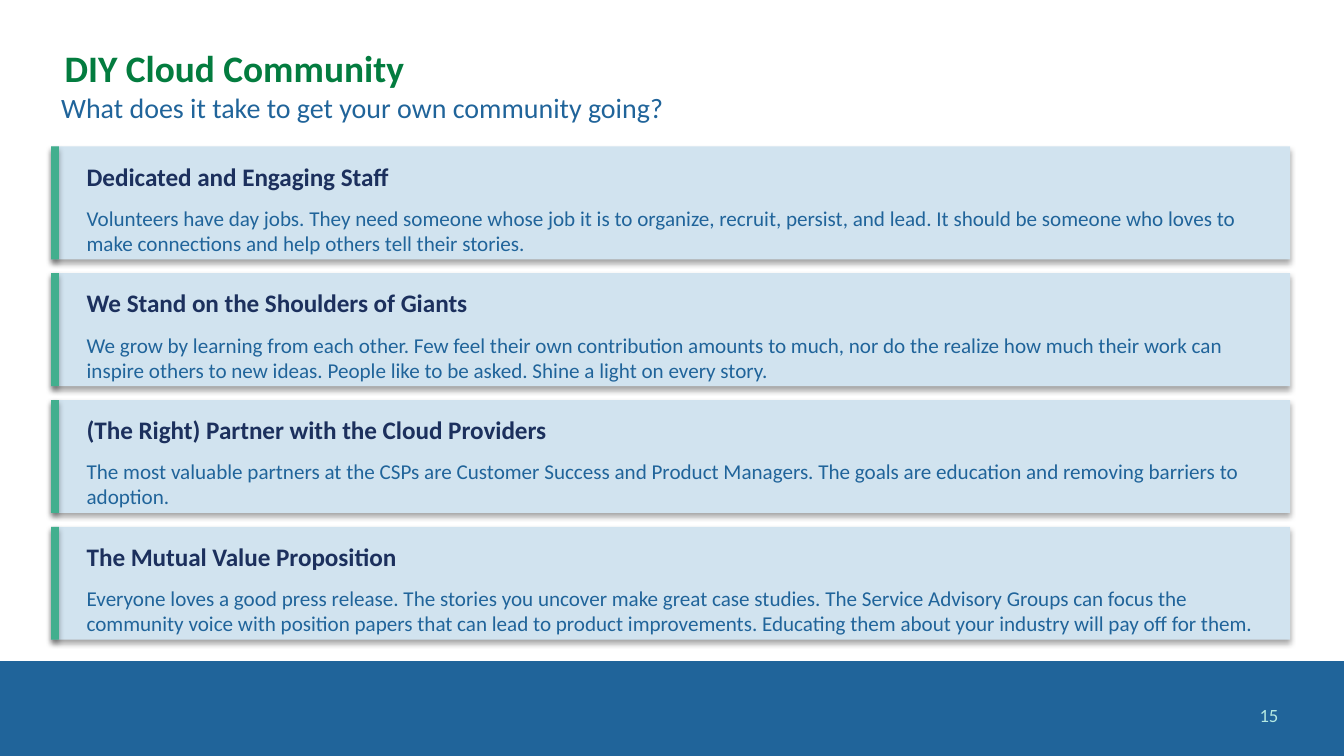
from lxml import etree
from pptx import Presentation
from pptx import util as u
from pptx.dml.color import RGBColor
from pptx.enum import shapes, text
from pptx.oxml import ns

BLUE = RGBColor(0x20, 0x64, 0x9A)
PALE_BLUE = RGBColor(0xD1, 0xE3, 0xEF)
NAVY = RGBColor(0x1C, 0x30, 0x5D)
GREEN = RGBColor(0x03, 0x7C, 0x3F)
MINT = RGBColor(0x42, 0xAF, 0x8E)
AQUA = RGBColor(0xB4, 0xE9, 0xE2)
BLACK = RGBColor(0, 0, 0)

WIDTH = 10
HEIGHT = WIDTH * 9 / 16
LEFT, CONTENT_WIDTH = 0.38, 9.22
CARDS_TOP, CARDS_BOTTOM, CARD_HEIGHT = 1.09, 4.76, 0.84
ACCENT_WIDTH = 0.06
TEXT_LEFT, TEXT_WIDTH = 0.57, 9
FOOTER_TOP = 4.92

CARDS = [
    ("Dedicated and Engaging Staff",
     "Volunteers have day jobs. They need someone whose job it is to organize, recruit, "
     "persist, and lead. It should be someone who loves to make connections and help "
     "others tell their stories."),
    ("We Stand on the Shoulders of Giants",
     "We grow by learning from each other. Few feel their own contribution amounts to "
     "much, nor do the realize how much their work can inspire others to new ideas. "
     "People like to be asked. Shine a light on every story."),
    ("(The Right) Partner with the Cloud Providers",
     "The most valuable partners at the CSPs are Customer Success and Product Managers. "
     "The goals are education and removing barriers to adoption."),
    ("The Mutual Value Proposition",
     "Everyone loves a good press release. The stories you uncover make great case "
     "studies. The Service Advisory Groups can focus the community voice with position "
     "papers that can lead to product improvements. Educating them about your industry "
     "will pay off for them."),
]


def inches(*lengths):
    return [u.Inches(length) for length in lengths]


def add_run(paragraph, words, size, color, bold=False):
    run = paragraph.add_run()
    run.text = words
    run.font.name = "Calibri"
    run.font.size = u.Pt(size)
    run.font.bold = bold
    run.font.color.rgb = color


def add_shadow(shape):
    effects = shape._element.spPr.find(ns.qn("a:effectLst"))
    shadow = etree.SubElement(
        effects, ns.qn("a:outerShdw"), blurRad=str(u.Pt(3.1)), dist=str(u.Pt(1.8)),
        dir=str(90 * 60000), algn="bl", rotWithShape="0")
    color = etree.SubElement(shadow, ns.qn("a:srgbClr"), val=str(BLACK))
    etree.SubElement(color, ns.qn("a:alpha"), val="35000")


def add_block(slide, left, top, width, height, color, shadow=False):
    block = slide.shapes.add_shape(
        shapes.MSO_SHAPE.RECTANGLE, *inches(left, top, width, height))
    block.fill.solid()
    block.fill.fore_color.rgb = color
    block.line.fill.background()
    block.shadow.inherit = False
    if shadow:
        add_shadow(block)


def add_text(slide, left, top, width, height, words, size, color, bold=False):
    box = slide.shapes.add_textbox(*inches(left, top, width, height))
    frame = box.text_frame
    frame.word_wrap = True
    frame.margin_left = frame.margin_right = u.Pt(5.4)
    frame.margin_top = frame.margin_bottom = u.Pt(2.7)
    add_run(frame.paragraphs[0], words, size, color, bold)
    return frame


def add_title(slide, words):
    title = slide.shapes.title
    title.left, title.top, title.width, title.height = inches(
        LEFT, 0.14, CONTENT_WIDTH, 0.76)
    frame = title.text_frame
    frame.auto_size = text.MSO_AUTO_SIZE.NONE
    frame.vertical_anchor = text.MSO_ANCHOR.MIDDLE
    paragraph = frame.paragraphs[0]
    paragraph.alignment = text.PP_ALIGN.LEFT
    paragraph.line_spacing = 0.9
    add_run(paragraph, words, 20, GREEN, bold=True)


def add_card(slide, top, heading, body):
    add_block(slide, LEFT, top, CONTENT_WIDTH, CARD_HEIGHT, PALE_BLUE, shadow=True)
    add_block(slide, LEFT, top, ACCENT_WIDTH, CARD_HEIGHT, MINT, shadow=True)
    add_text(slide, TEXT_LEFT, top + 0.07, TEXT_WIDTH, 0.3, heading, 13.5, NAVY, bold=True)
    add_text(slide, TEXT_LEFT, top + 0.4, TEXT_WIDTH, 0.45, body, 11.25, BLUE)


def add_footer(slide, number):
    add_block(slide, 0, FOOTER_TOP, WIDTH, HEIGHT - FOOTER_TOP, BLUE)
    frame = add_text(slide, 7.36, 5.17, 2.25, 0.3, number, 10, AQUA)
    frame.margin_right = u.Inches(0.1)
    frame.vertical_anchor = text.MSO_ANCHOR.MIDDLE
    frame.paragraphs[0].alignment = text.PP_ALIGN.RIGHT


def main():
    presentation = Presentation()
    presentation.slide_width, presentation.slide_height = inches(WIDTH, HEIGHT)
    slide = presentation.slides.add_slide(presentation.slide_layouts[5])
    add_footer(slide, "15")
    add_title(slide, "DIY Cloud Community")
    add_text(slide, LEFT, 0.64, CONTENT_WIDTH, 0.33,
             "What does it take to get your own community going?", 15, BLUE)
    pitch = (CARDS_BOTTOM - CARD_HEIGHT - CARDS_TOP) / (len(CARDS) - 1)
    for row, (heading, body) in enumerate(CARDS):
        add_card(slide, CARDS_TOP + row * pitch, heading, body)
    presentation.save("out.pptx")


if __name__ == "__main__":
    main()
